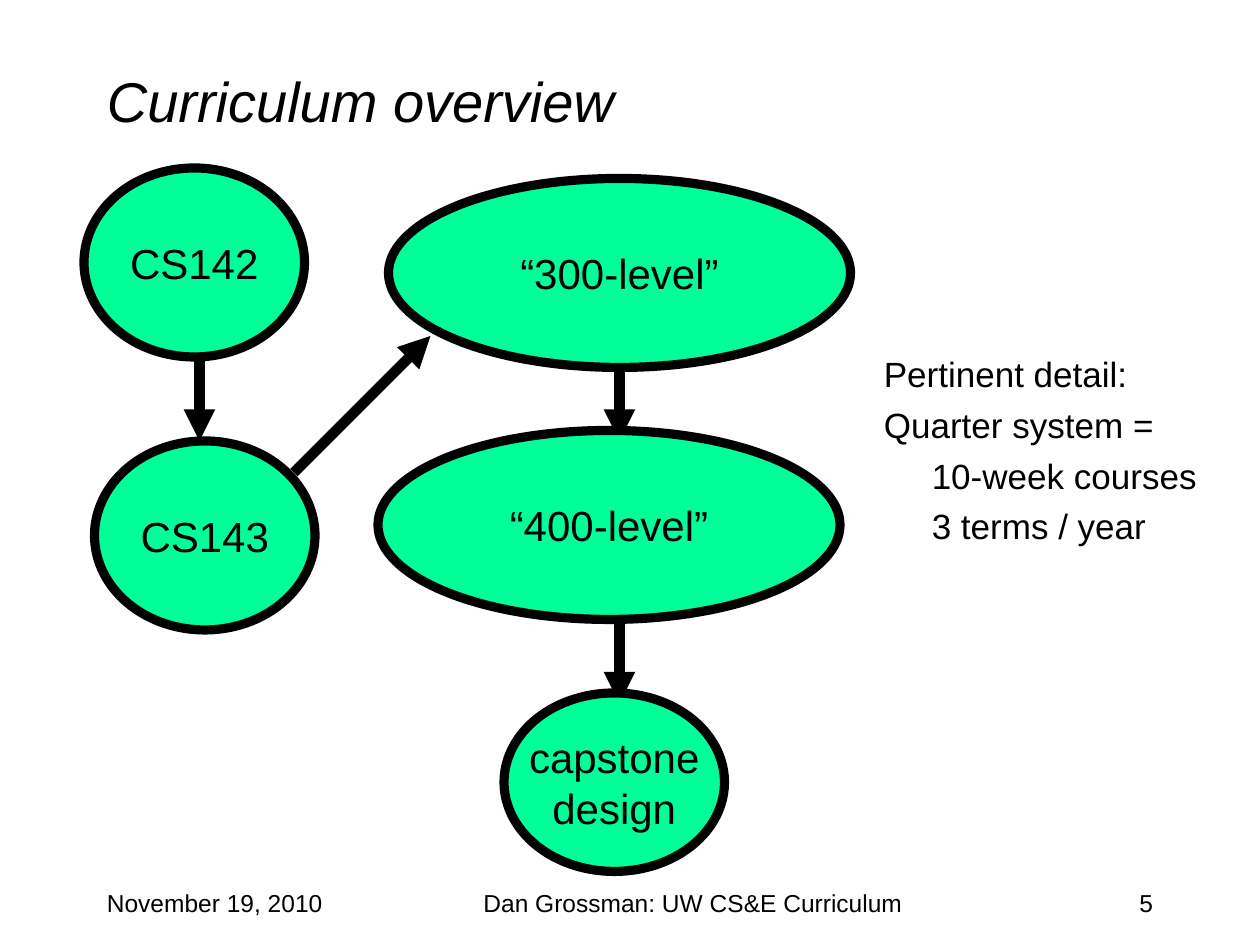
"""Build the curriculum overview slide: a course flow diagram with a side note."""
from lxml.etree import SubElement
from pptx import Presentation
from pptx.dml.color import RGBColor
from pptx.enum.shapes import MSO_CONNECTOR as Connector, MSO_SHAPE as Shape
from pptx.enum.text import MSO_ANCHOR as Anchor, PP_ALIGN as Align
from pptx.oxml.ns import qn
from pptx.util import Inches, Pt

BLACK = RGBColor(0, 0, 0)
GREEN = RGBColor(0x00, 0xFF, 0x99)
FONT = "Arial"
COLUMNS, ROWS = 120, 90

TITLE = ("Curriculum overview", (9, 2, 102, 15))
FOOTERS = [
    ("November 19, 2010", (9, 84, 25, 6), Align.LEFT),
    ("Dan Grossman: UW CS&E Curriculum", (38, 84, 56, 6), Align.CENTER),
    ("5", (86, 84, 25, 6), Align.RIGHT),
]
COURSES = [
    (["CS142"], (8, 16, 21, 18)),
    (["CS143"], (9, 42, 21, 18)),
    (["“300-level”"], (37, 17, 44, 18)),
    (["“400-level”"], (36, 41, 44, 18)),
    (["capstone", "design"], (48, 66, 21, 17)),
]
ARROWS = [
    ((19, 34), (19, 42)),
    ((28, 45), (41, 32)),
    ((59, 34), (59, 42)),
    ((59, 59), (59, 67)),
]
DETAIL_BOX = (83, 33, 34, 21)
DETAILS = [
    ("Pertinent detail:", 0),
    ("Quarter system =", 0),
    ("10-week courses", 1),
    ("3 terms / year", 1),
]

presentation = Presentation()
presentation.slide_width, presentation.slide_height = Inches(10), Inches(7.5)
slide = presentation.slides.add_slide(presentation.slide_layouts[6])


def place(*cells):
    """Turn alternating column and row counts into slide lengths."""
    units = (presentation.slide_width / COLUMNS, presentation.slide_height / ROWS)
    return [round(cell * units[index % 2]) for index, cell in enumerate(cells)]


def write(shape, lines, size, align=Align.LEFT, anchor=Anchor.TOP, italic=False,
          wrap=True, space=0, indents=()):
    """Fill a shape with one formatted paragraph per line."""
    frame = shape.text_frame
    frame.word_wrap, frame.vertical_anchor = wrap, anchor
    for index, line in enumerate(lines):
        paragraph = frame.paragraphs[0] if index == 0 else frame.add_paragraph()
        paragraph.alignment = align
        paragraph.space_before = Pt(space)
        if indents:
            paragraph._p.get_or_add_pPr().set("marL", str(Inches(0.38) * indents[index]))
        run = paragraph.add_run()
        run.text = line
        run.font.name, run.font.size = FONT, Pt(size)
        run.font.italic, run.font.color.rgb = italic, BLACK


def add_arrow(start, end):
    """Draw a thick line with a triangle head at its end."""
    arrow = slide.shapes.add_connector(Connector.STRAIGHT, *place(*start, *end))
    arrow.line.color.rgb, arrow.line.width = BLACK, Pt(6)
    SubElement(arrow.line._get_or_add_ln(), qn("a:tailEnd"), type="triangle")
    SubElement(arrow._element.spPr, qn("a:effectLst"))


def add_course(lines, box):
    """Draw one outlined course ellipse with its label."""
    ellipse = slide.shapes.add_shape(Shape.OVAL, *place(*box))
    ellipse.shadow.inherit = False
    ellipse.fill.solid()
    ellipse.fill.fore_color.rgb = GREEN
    ellipse.line.color.rgb, ellipse.line.width = BLACK, Pt(5.25)
    write(ellipse, lines, 24, align=Align.CENTER, anchor=Anchor.MIDDLE, wrap=False)


title, title_box = TITLE
write(slide.shapes.add_textbox(*place(*title_box)), [title], 32,
      anchor=Anchor.MIDDLE, italic=True)
for text, box, align in FOOTERS:
    write(slide.shapes.add_textbox(*place(*box)), [text], 14, align=align)
for start, end in ARROWS:
    add_arrow(start, end)
for lines, box in COURSES:
    add_course(lines, box)
detail_lines, detail_levels = zip(*DETAILS)
write(slide.shapes.add_textbox(*place(*DETAIL_BOX)), detail_lines, 20,
      space=5, indents=detail_levels)

presentation.save("out.pptx")
